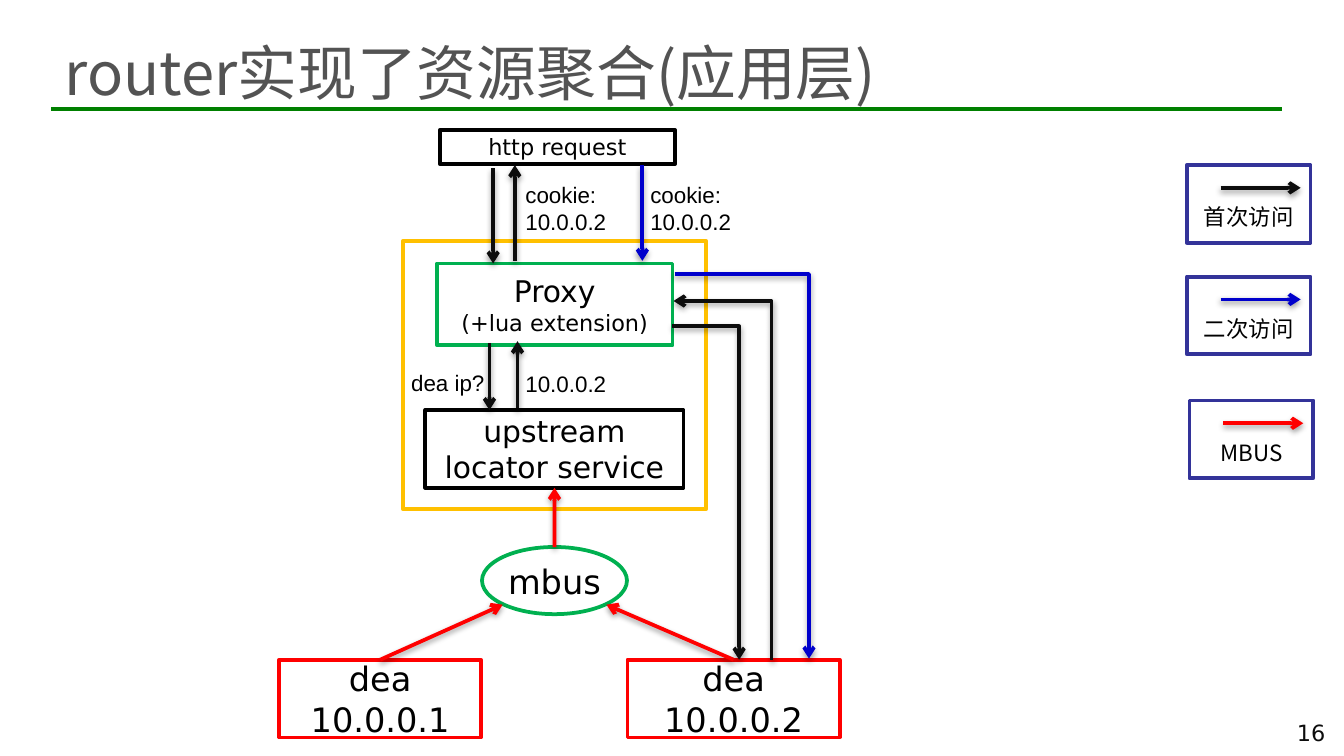
"""Build a slide showing how the router aggregates application resources."""
from lxml.etree import SubElement
from pptx import Presentation
from pptx.dml.color import RGBColor
from pptx.enum.shapes import MSO_CONNECTOR as Connector, MSO_SHAPE as Shape
from pptx.enum.text import MSO_ANCHOR as Anchor, PP_ALIGN as Align
from pptx.oxml.ns import qn
from pptx.util import Cm, Pt

THEME = {
    "colors": {
        "rule": "008000", "title": "535353", "number": "0D0D0D", "text": "000000",
        "fill": "FFFFFF", "router": "FFC000", "green": "00B050", "black": "000000",
        "red": "FF0000", "legend": "333399", "first": "0D0D0D", "second": "0000CC",
    },
    "fonts": {"body": "DejaVu Sans", "label": "Arial", "cjk": "Noto Sans CJK SC"},
    "sizes": {"title": 32, "large": 18, "medium": 16, "small": 12},
    "line": 2,
}

BOXES = [
    ("router", Shape.RECTANGLE, (7.62, 4.55, 5.72, 5.08), "router", []),
    ("proxy", Shape.RECTANGLE, (8.26, 4.98, 4.45, 1.55), "green",
     [("Proxy", "medium"), ("(+lua extension)", "small")]),
    ("locator", Shape.RECTANGLE, (8.04, 7.75, 4.88, 1.47), "black",
     [("upstream", "medium"), ("locator service", "medium")]),
    ("dea 1", Shape.RECTANGLE, (5.28, 12.47, 3.81, 1.47), "red",
     [("dea", "large"), ("10.0.0.1", "large")]),
    ("dea 2", Shape.RECTANGLE, (11.86, 12.47, 4.01, 1.47), "red",
     [("dea", "large"), ("10.0.0.2", "large")]),
    ("bus", Shape.OVAL, (9.11, 10.34, 2.74, 1.27), "green", [("mbus", "large")]),
    ("request", Shape.RECTANGLE, (8.31, 2.46, 4.45, 0.64), "black",
     [("http request", "small")]),
]
LEGEND = [
    ("首次访问", "first", 22.43, 3.12),
    ("二次访问", "second", 22.43, 5.23),
    ("MBUS", "red", 22.48, 7.57),
]
LEGEND_SIZE = (2.34, 1.47)
LEGEND_ARROW = (0.64, 2.15, 0.43)
LABELS = [
    (["dea ip?"], (7.52, 6.86, 1.91, 0.76)),
    (["10.0.0.2"], (9.68, 6.88, 2.11, 0.76)),
    (["cookie:", "10.0.0.2"], (9.68, 3.3, 2.36, 1.27)),
    (["cookie:", "10.0.0.2"], (12.04, 3.3, 2.36, 1.27)),
]
ARROWS = [
    ((9.25, 6.48), (9.25, 7.75), "first"),
    ((9.78, 7.72), (9.78, 6.45), "first"),
    ((9.73, 4.93), (9.73, 3.12), "first"),
    ((9.32, 3.18), (9.32, 4.98), "first"),
    ((12.14, 3.12), (12.14, 4.93), "second"),
]
DEA_ARROWS = [("dea 1", (9.5, 11.43)), ("dea 2", (11.46, 11.43))]
ELBOWS = [
    ((12.7, 6.17), (13.97, 12.47), "first", "tailEnd"),
    ((12.73, 5.69), (14.58, 12.47), "first", "headEnd"),
    ((12.75, 5.18), (15.29, 12.45), "second", "tailEnd"),
]


def color(name):
    """Return a theme colour."""
    return RGBColor.from_string(THEME["colors"][name])


def set_values(target, values):
    """Set every attribute named in a dict."""
    for name, value in values.items():
        setattr(target, name, value)


def write(shape, lines, font="body", ink="text", align=Align.LEFT, **frame_format):
    """Write (text, size) lines, one paragraph each."""
    frame = shape.text_frame
    set_values(frame, {"word_wrap": True, "vertical_anchor": Anchor.MIDDLE, **frame_format})
    for index, (text, size) in enumerate(lines):
        paragraph = frame.add_paragraph() if index else frame.paragraphs[0]
        paragraph.alignment = align
        run = paragraph.add_run()
        run.text = text
        set_values(run.font, {"size": Pt(THEME["sizes"][size]), "name": THEME["fonts"][font]})
        run.font.color.rgb = color(ink)
        SubElement(run.font._element, qn("a:ea"), typeface=THEME["fonts"][font])


def add_text(slide, box, lines, **text_format):
    """Add a text box."""
    shape = slide.shapes.add_textbox(*map(Cm, box))
    write(shape, lines, margin_right=0, **text_format)


def add_box(slide, kind, box, outline, lines, **text_format):
    """Add an outlined shape with centred text that stays on its own lines."""
    shape = slide.shapes.add_shape(kind, *map(Cm, box))
    shape.shadow.inherit = False
    shape.fill.solid()
    shape.fill.fore_color.rgb = color("fill")
    shape.line.color.rgb = color(outline)
    shape.line.width = Pt(THEME["line"])
    write(shape, lines, align=Align.CENTER, word_wrap=False,
          margin_left=0, margin_right=0, **text_format)
    return shape


def add_line(slide, start, end, ink, arrow="tailEnd", elbow=False):
    """Add a line, with a shadow when it has an arrowhead."""
    kind = Connector.ELBOW if elbow else Connector.STRAIGHT
    connector = slide.shapes.add_connector(kind, *map(Cm, start + end))
    connector.line.color.rgb = color(ink)
    connector.line.width = Pt(THEME["line"])
    properties = connector.element.spPr
    if elbow:
        properties.find(qn("a:prstGeom")).set("prst", "bentConnector2")
    effects = SubElement(properties, qn("a:effectLst"))
    if arrow:
        SubElement(properties.find(qn("a:ln")), qn(f"a:{arrow}"), type="arrow")
        shadow = SubElement(effects, qn("a:outerShdw"), blurRad="40000", dist="20000",
                            dir="5400000", rotWithShape="0")
        shade = SubElement(shadow, qn("a:srgbClr"), val=THEME["colors"]["black"])
        SubElement(shade, qn("a:alpha"), val="38000")
    return connector


def main():
    """Build and save the presentation."""
    presentation = Presentation()
    set_values(presentation, {"slide_width": Cm(25.4), "slide_height": Cm(14.29)})
    slide = presentation.slides.add_slide(presentation.slide_layouts[6])

    add_line(slide, (0.97, 2.06), (24.23, 2.06), "rule", arrow=None)
    add_text(slide, (0.97, 0.48, 23.39, 1.75), [("router实现了资源聚合(应用层)", "title")],
             font="cjk", ink="title")
    add_text(slide, (24.26, 13.46, 1.07, 0.79), [("16", "small")], ink="number")

    boxes = {name: add_box(slide, *values) for name, *values in BOXES}
    for lines, box in LABELS:
        add_text(slide, box, [(line, "small") for line in lines],
                 font="label", vertical_anchor=Anchor.TOP)

    for start, end, ink in ARROWS:
        add_line(slide, start, end, ink)
    for name, end in DEA_ARROWS:
        add_line(slide, end, end, "red").begin_connect(boxes[name], 0)
    feed = add_line(slide, (10.48, 10.34), (10.48, 9.22), "red")
    feed.begin_connect(boxes["bus"], 0)
    feed.end_connect(boxes["locator"], 2)
    for start, end, ink, arrow in ELBOWS:
        add_line(slide, start, end, ink, arrow, elbow=True)

    first, last, drop = LEGEND_ARROW
    for text, ink, left, top in LEGEND:
        add_box(slide, Shape.RECTANGLE, (left, top, *LEGEND_SIZE), "legend",
                [(text, "small")], font="cjk", margin_top=Cm(0.61))
        add_line(slide, (left + first, top + drop), (left + last, top + drop), ink)

    presentation.save("out.pptx")


if __name__ == "__main__":
    main()
